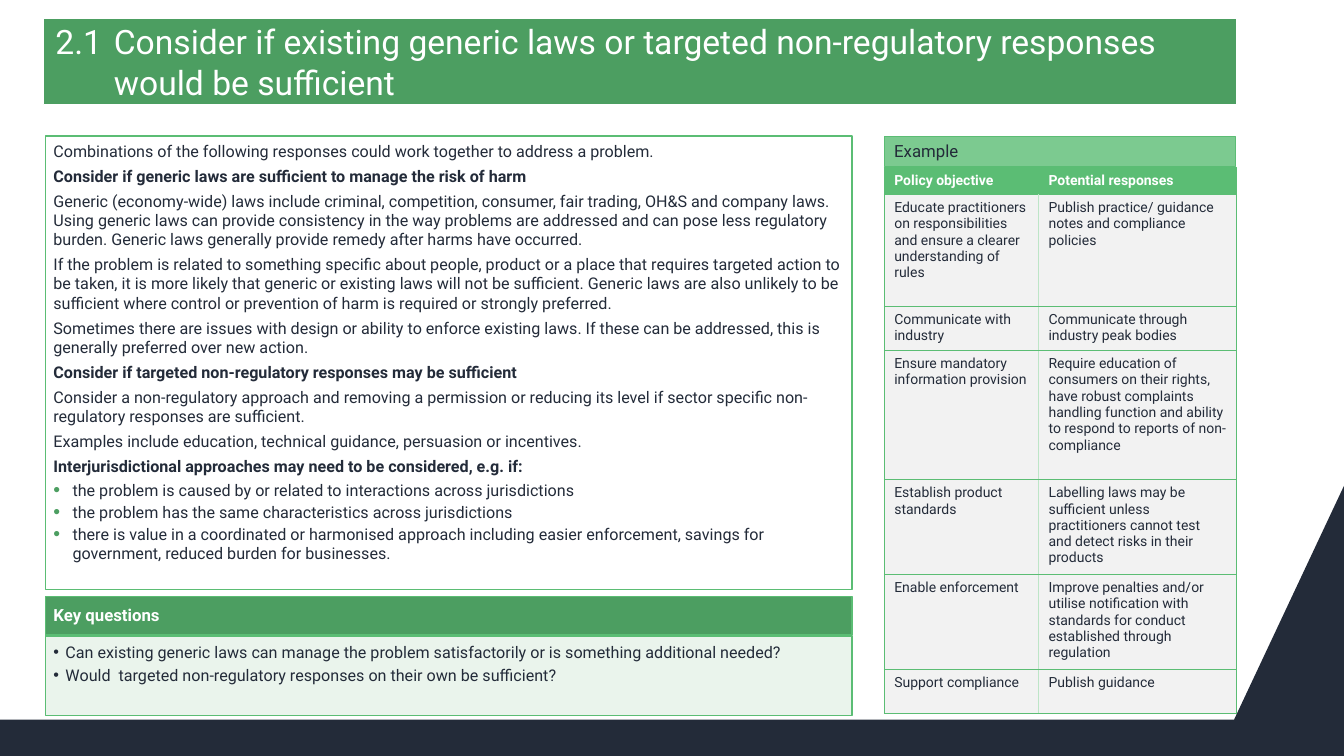
from lxml.etree import SubElement
from pptx import Presentation
from pptx.dml.color import RGBColor
from pptx.enum.shapes import MSO_SHAPE
from pptx.enum.text import MSO_ANCHOR, PP_ALIGN
from pptx.oxml.ns import qn
from pptx.util import Inches, Pt

COLORS = {
    "navy": "232B39", "white": "FFFFFF", "green": "4C9E61", "border": "5BBD74",
    "light": "7CCA90", "divider": "BDE5C7", "pale": "EAF4EC", "gray": "F2F2F2",
}
FONT = "Roboto"
LEFT, PANEL_WIDTH = 0.45, 8
TABLE_LEFT, TABLE_TOP = 8.77, 1.66

# Each entry: style, text
RESPONSES = [
    ("body", "Combinations of the following responses could work together to address a problem."),
    ("heading", "Consider if generic laws are sufficient to manage the risk of harm"),
    ("body", "Generic (economy-wide) laws include criminal, competition, consumer, fair trading, OH&S and "
             "company laws. Using generic laws can provide consistency in the way problems are addressed and "
             "can pose less regulatory burden. Generic laws generally provide remedy after harms have occurred."),
    ("body", "If the problem is related to something specific about people, product or a place that requires "
             "targeted action to be taken, it is more likely that generic or existing laws will not be "
             "sufficient. Generic laws are also unlikely to be sufficient where control or prevention of harm "
             "is required or strongly preferred."),
    ("body", "Sometimes there are issues with design or ability to enforce existing laws. If these can be "
             "addressed, this is generally preferred over new action."),
    ("heading", "Consider if targeted non-regulatory responses may be sufficient"),
    ("body", "Consider a non-regulatory approach and removing a permission or reducing its level if sector "
             "specific non-regulatory responses are sufficient."),
    ("body", "Examples include education, technical guidance, persuasion or incentives."),
    ("heading", "Interjurisdictional approaches may need to be considered, e.g. if:"),
    ("bullet", "the problem is caused by or related to interactions across jurisdictions"),
    ("bullet", "the problem has the same characteristics across jurisdictions"),
    ("bullet", "there is value in a coordinated or harmonised approach including easier enforcement, savings "
               "for government, reduced burden for businesses."),
]
QUESTIONS = [
    "Can existing generic laws can manage the problem satisfactorily or is something additional needed?",
    "Would  targeted non-regulatory responses on their own be sufficient?",
]
# Each entry: row height, policy objective, potential response
EXAMPLES = [
    (0.27, "Policy objective", "Potential responses"),
    (1.11, "Educate practitioners on responsibilities and ensure a clearer understanding of rules",
     "Publish practice/ guidance notes and compliance policies"),
    (0.44, "Communicate with industry", "Communicate through industry peak bodies"),
    (1.28, "Ensure mandatory information provision",
     "Require education of consumers on their rights, have robust complaints handling function and ability "
     "to respond to reports of non-compliance"),
    (0.94, "Establish product standards",
     "Labelling laws may be sufficient unless practitioners cannot test and detect risks in their products"),
    (0.94, "Enable enforcement",
     "Improve penalties and/or utilise notification with standards for conduct established through regulation"),
    (0.44, "Support compliance", "Publish guidance"),
]


def color(name):
    return RGBColor.from_string(COLORS[name])


def paint(target, name):
    target.fill.solid()
    target.fill.fore_color.rgb = color(name)


def add_box(slide, left, top, width, height, fill, line="border", weight=1,
            margins=(0.08, 0.05), anchor=MSO_ANCHOR.TOP):
    shape = slide.shapes.add_shape(MSO_SHAPE.RECTANGLE, Inches(left), Inches(top), Inches(width), Inches(height))
    shape.shadow.inherit = False
    paint(shape, fill)
    shape.line.color.rgb = color(line)
    shape.line.width = Pt(weight)
    frame = shape.text_frame
    frame.word_wrap = True
    frame.vertical_anchor = anchor
    frame.margin_left = frame.margin_right = Inches(margins[0])
    frame.margin_top = frame.margin_bottom = Inches(margins[1])
    return frame


def set_hanging(paragraph, indent):
    properties = paragraph._p.get_or_add_pPr()
    properties.set("marL", str(Inches(indent)))
    properties.set("indent", str(-Inches(indent)))
    return properties


def set_bullet(paragraph, indent, bullet_color, percent):
    properties = set_hanging(paragraph, indent)
    holder = SubElement(properties, qn("a:buClr"))
    SubElement(holder, qn("a:srgbClr"), val=COLORS[bullet_color])
    SubElement(properties, qn("a:buSzPct"), val=str(percent * 1000))
    SubElement(properties, qn("a:buFont"), typeface="Arial")
    SubElement(properties, qn("a:buChar"), char="•")


def write(paragraph, text, size, text_color="navy", bold=False, space=0):
    paragraph.text = text
    paragraph.alignment = PP_ALIGN.LEFT
    paragraph.space_before = paragraph.space_after = Pt(space)
    font = paragraph.font
    font.name, font.size, font.bold = FONT, Pt(size), bold
    font.color.rgb = color(text_color)


def next_paragraph(frame, index):
    return frame.add_paragraph() if index else frame.paragraphs[0]


def set_borders(cell, sides):
    properties = cell._tc.get_or_add_tcPr()
    for position, (side, name) in enumerate(sides.items()):
        line = properties.makeelement(qn(f"a:{side}"), {"w": str(Pt(0.5))})
        if name:
            fill = SubElement(line, qn("a:solidFill"))
            SubElement(fill, qn("a:srgbClr"), val=COLORS[name])
        else:
            SubElement(line, qn("a:noFill"))
        properties.insert(position, line)


def add_footer(slide):
    builder = slide.shapes.build_freeform(Inches(12.24), Inches(7.14), scale=1.0)
    corners = [(0, 7.14), (0, 7.5), (13.33, 7.5), (13.33, 4.82)]
    builder.add_line_segments([(Inches(x), Inches(y)) for x, y in corners], close=True)
    footer = builder.convert_to_shape()
    footer.shadow.inherit = False
    paint(footer, "navy")
    footer.line.fill.background()


def add_title(slide):
    frame = add_box(slide, 0.43, 0.18, 11.84, 0.86, "green", "white",
                    margins=(0.12, 0.01), anchor=MSO_ANCHOR.MIDDLE)
    set_hanging(frame.paragraphs[0], 0.58)
    write(frame.paragraphs[0], "2.1 \tConsider if existing generic laws or targeted non-regulatory "
          "responses would be sufficient", 24, "white")


def add_responses(slide):
    frame = add_box(slide, LEFT, 1.35, PANEL_WIDTH, 4.5, "white")
    for index, (style, text) in enumerate(RESPONSES):
        paragraph = next_paragraph(frame, index)
        if style == "bullet":
            set_bullet(paragraph, 0.19, "green", 120)
        write(paragraph, text, 11.5, bold=style == "heading", space=1 if style == "bullet" else 2)


def add_questions(slide):
    frame = add_box(slide, LEFT, 6.31, PANEL_WIDTH, 0.79, "pale")
    for index, text in enumerate(QUESTIONS):
        paragraph = next_paragraph(frame, index)
        set_bullet(paragraph, 0.12, "navy", 100)
        write(paragraph, text, 11.5, space=1)
        paragraph.line_spacing = 1.07
    header = add_box(slide, LEFT, 5.92, PANEL_WIDTH, 0.38, "green", margins=(0.08, 0), anchor=MSO_ANCHOR.MIDDLE)
    write(header.paragraphs[0], "Key questions", 12, "white", bold=True)
    header.paragraphs[0].line_spacing = 0.9


def add_examples(slide):
    widths = (1.53, 1.96)
    height = sum(row[0] for row in EXAMPLES)
    table = slide.shapes.add_table(len(EXAMPLES), len(widths), Inches(TABLE_LEFT), Inches(TABLE_TOP),
                                   Inches(sum(widths)), Inches(height)).table
    for column, width in zip(table.columns, widths):
        column.width = Inches(width)
    for row_index, (row_height, *texts) in enumerate(EXAMPLES):
        table.rows[row_index].height = Inches(row_height)
        header = row_index == 0
        inner = None if header else "divider"
        for column_index, text in enumerate(texts):
            cell = table.cell(row_index, column_index)
            paint(cell, "border" if header else "gray")
            write(cell.text_frame.paragraphs[0], text, 10, "white" if header else "navy", bold=header)
            set_borders(cell, {"lnL": inner if column_index else "border",
                               "lnR": "border" if column_index else inner,
                               "lnT": "border", "lnB": "border"})
    # Caption above the table
    caption = add_box(slide, TABLE_LEFT, 1.35, 3.48, 0.3, "light", weight=0.75,
                      margins=(0.1, 0.05), anchor=MSO_ANCHOR.MIDDLE)
    write(caption.paragraphs[0], "Example", 12)


def main():
    presentation = Presentation()
    presentation.slide_width, presentation.slide_height = Inches(13.33), Inches(7.5)
    slide = presentation.slides.add_slide(presentation.slide_layouts[6])
    add_footer(slide)
    add_title(slide)
    add_responses(slide)
    add_questions(slide)
    add_examples(slide)
    presentation.save("out.pptx")


if __name__ == "__main__":
    main()
